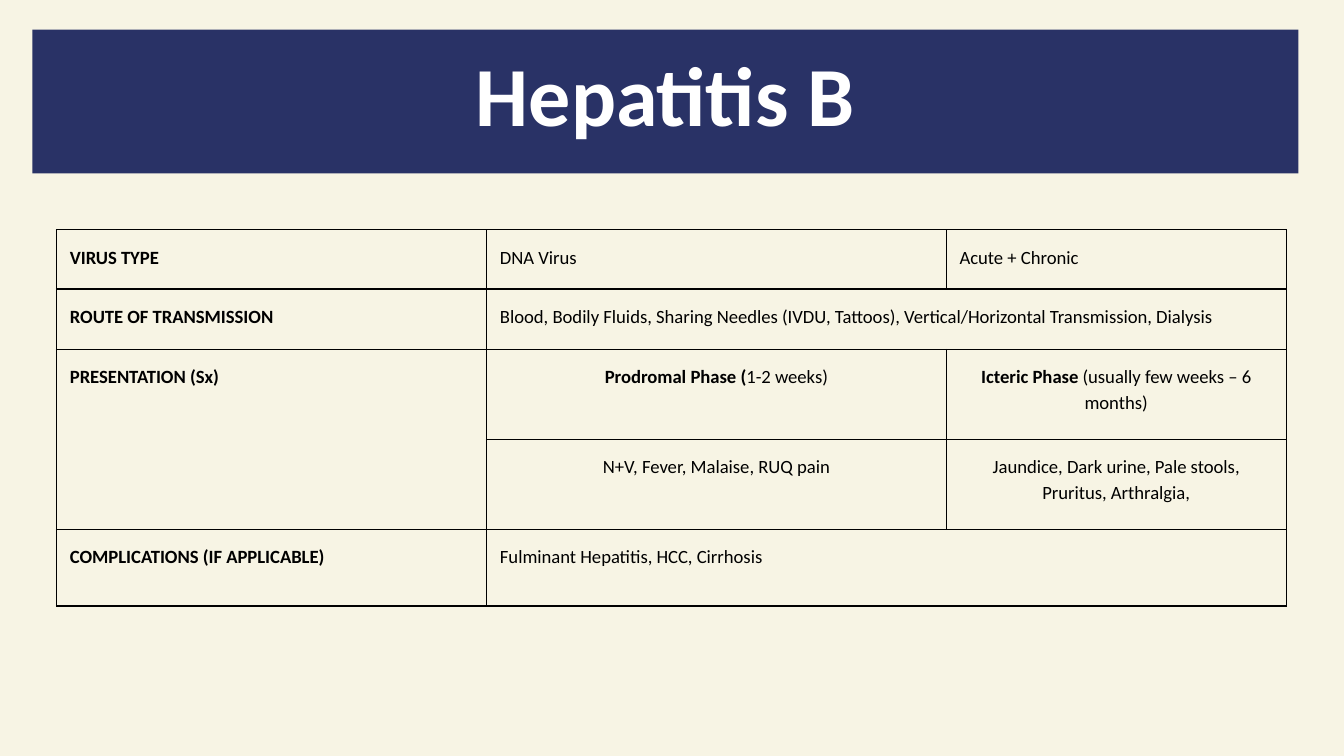
"""Build the Hepatitis B summary slide."""
from pptx import Presentation
from pptx import oxml
from pptx.dml.color import RGBColor
from pptx.enum import shapes, text
from pptx.oxml import ns
from pptx.util import Inches, Pt

CREAM = RGBColor(0xF7, 0xF4, 0xE4)
NAVY = RGBColor(0x29, 0x32, 0x66)
WHITE = RGBColor(0xFF, 0xFF, 0xFF)
BLACK = RGBColor(0, 0, 0)
FONT = "Calibri"
LEFT, CENTER = text.PP_ALIGN.LEFT, text.PP_ALIGN.CENTER

TITLE = "Hepatitis B"
COLUMN_WIDTHS = [3.2, 3.42, 2.53]
ROW_HEIGHTS = [0.44, 0.45, 0.67, 0.67, 0.57]
FACTS = [
    (0, 0, LEFT, [("VIRUS TYPE", True)]),
    (0, 1, LEFT, [("DNA Virus", False)]),
    (0, 2, LEFT, [("Acute + Chronic", False)]),
    (1, 0, LEFT, [("ROUTE OF TRANSMISSION", True)]),
    (1, 1, LEFT, [("Blood, Bodily Fluids, Sharing Needles (IVDU, Tattoos), "
                   "Vertical/Horizontal Transmission, Dialysis", False)]),
    (2, 0, LEFT, [("PRESENTATION (Sx)", True)]),
    (2, 1, CENTER, [("Prodromal Phase (", True), ("1-2 weeks)", False)]),
    (2, 2, CENTER, [("Icteric Phase ", True), ("(usually few weeks – 6 months)", False)]),
    (3, 1, CENTER, [("N+V, Fever, Malaise, RUQ pain", False)]),
    (3, 2, CENTER, [("Jaundice, Dark urine, Pale stools, Pruritus, Arthralgia,", False)]),
    (4, 0, LEFT, [("COMPLICATIONS (IF APPLICABLE)", True)]),
    (4, 1, LEFT, [("Fulminant Hepatitis, HCC, Cirrhosis", False)]),
]
MERGES = [((1, 1), (1, 2)), ((2, 0), (3, 0)), ((4, 1), (4, 2))]


def add_run(paragraph, words, size, color, bold):
    run = paragraph.add_run()
    run.text = words
    run.font.name = FONT
    run.font.size = Pt(size)
    run.font.bold = bold
    run.font.color.rgb = color


def set_margins(area):
    area.margin_left = area.margin_right = Inches(0.1)
    area.margin_top = area.margin_bottom = Inches(0.1)


def add_borders(cell):
    properties = cell._tc.get_or_add_tcPr()
    for position, side in enumerate("LRTB"):
        properties.insert(position, oxml.parse_xml(
            f'<a:ln{side} {ns.nsdecls("a")} w="{Pt(0.75)}"><a:solidFill>'
            f'<a:srgbClr val="{BLACK}"/></a:solidFill></a:ln{side}>'))


def add_title(slide):
    banner = slide.shapes.add_shape(
        shapes.MSO_SHAPE.RECTANGLE, Inches(0.24), Inches(0.22), Inches(9.42), Inches(1.07))
    banner.shadow.inherit = False
    banner.fill.solid()
    banner.fill.fore_color.rgb = NAVY
    banner.line.fill.background()
    frame = banner.text_frame
    frame.word_wrap = True
    frame.vertical_anchor = text.MSO_ANCHOR.TOP
    set_margins(frame)
    frame.paragraphs[0].alignment = CENTER
    add_run(frame.paragraphs[0], TITLE, 45, WHITE, True)


def add_facts(slide):
    table = slide.shapes.add_table(
        len(ROW_HEIGHTS), len(COLUMN_WIDTHS), Inches(0.42), Inches(1.71),
        Inches(sum(COLUMN_WIDTHS)), Inches(sum(ROW_HEIGHTS))).table
    table.first_row = table.horz_banding = False
    for column, width in zip(table.columns, COLUMN_WIDTHS):
        column.width = Inches(width)
    for row, height in zip(table.rows, ROW_HEIGHTS):
        row.height = Inches(height)
    for cell in table.iter_cells():
        cell.fill.background()
        set_margins(cell)
        add_borders(cell)
    for first, last in MERGES:
        table.cell(*first).merge(table.cell(*last))
    for row, column, alignment, runs in FACTS:
        paragraph = table.cell(row, column).text_frame.paragraphs[0]
        paragraph.alignment = alignment
        paragraph.line_spacing = 1.15
        for words, bold in runs:
            add_run(paragraph, words, 10, BLACK, bold)


def main():
    deck = Presentation()
    deck.slide_width = Inches(10)
    deck.slide_height = deck.slide_width * 9 // 16
    slide = deck.slides.add_slide(deck.slide_layouts[6])
    slide.background.fill.solid()
    slide.background.fill.fore_color.rgb = CREAM
    add_title(slide)
    add_facts(slide)
    deck.save("out.pptx")


if __name__ == "__main__":
    main()
